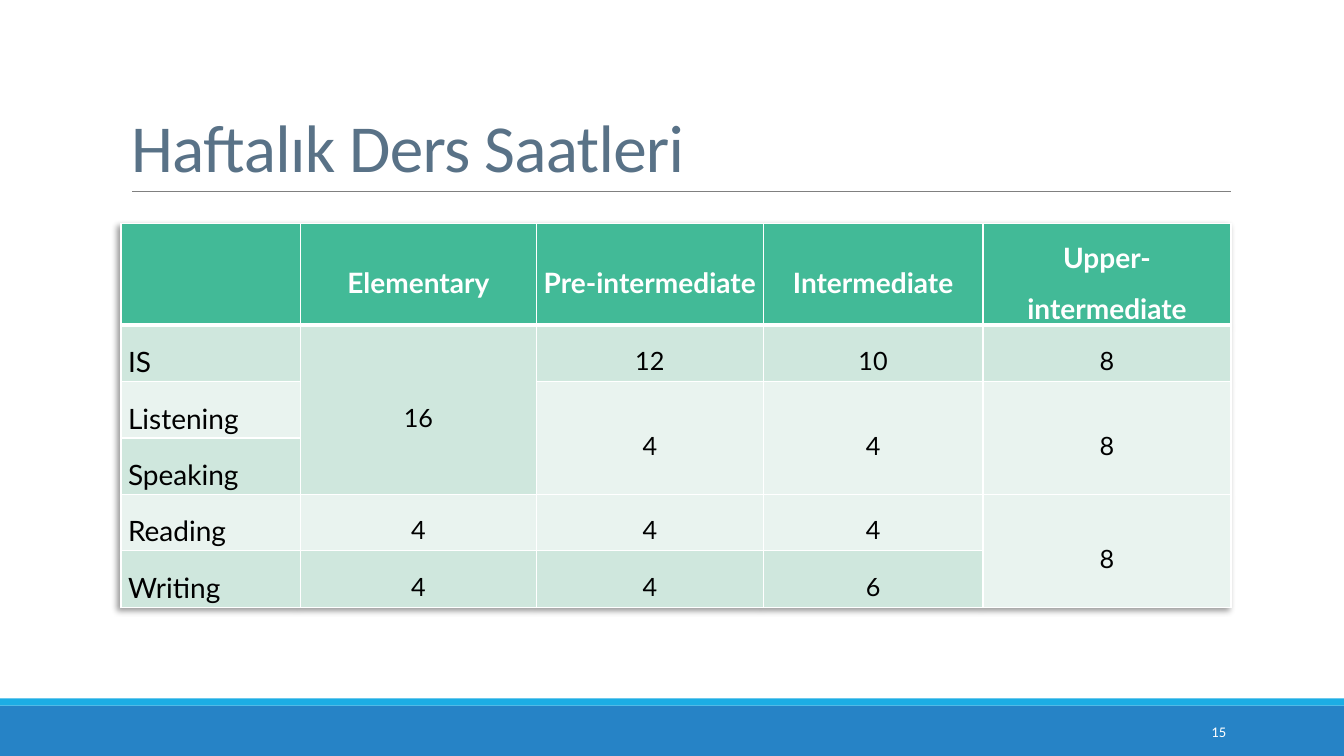
import pptx
import pptx.util
import pptx.dml.color
import pptx.enum.shapes
import pptx.enum.text
import pptx.oxml
import pptx.oxml.ns

Inches, Pt = pptx.util.Inches, pptx.util.Pt
RGB = pptx.dml.color.RGBColor
ALIGN, ANCHOR = pptx.enum.text.PP_ALIGN, pptx.enum.text.MSO_ANCHOR
NS = pptx.oxml.ns.nsdecls("a")

# Content: None marks a cell covered by the merged cell above it
TITLE = "Haftalık Ders Saatleri"
PAGE = "15"
HOURS = [
    ["", "Elementary", "Pre-intermediate", "Intermediate", "Upper-intermediate"],
    ["IS", "16", "12", "10", "8"],
    ["Listening", None, "4", "4", "8"],
    ["Speaking", None, None, None, None],
    ["Reading", "4", "4", "4", "8"],
    ["Writing", "4", "4", "6", None],
]
COLS = [1.78, 2.34, 2.25, 2.18, 2.46]
ROWS = [1.0] + [0.56] * 5

WHITE = RGB(0xFF, 0xFF, 0xFF)
BLACK = RGB(0, 0, 0)
SLATE = RGB(0x59, 0x72, 0x87)
GREY = RGB(0x80, 0x80, 0x80)
BLUE = RGB(0x26, 0x83, 0xC6)
SKY = RGB(0x1C, 0xAD, 0xE4)
GREEN = RGB(0x42, 0xBA, 0x97)
BANDS = [RGB(0xE9, 0xF3, 0xEF), RGB(0xCF, 0xE7, 0xDD)]
BARS = [(7, 0.5, BLUE), (6.93, 0.07, SKY)]


def edge(cell, row):
    """Draw white cell borders, thicker under the header."""
    thick = {"lnB": 0, "lnT": 1}
    props = cell._tc.get_or_add_tcPr()
    for i, tag in enumerate(["lnL", "lnR", "lnT", "lnB"]):
        width = Pt(3 if thick.get(tag) == row else 1)
        props.insert(i, pptx.oxml.parse_xml(
            f'<a:{tag} {NS} w="{width}"><a:solidFill><a:srgbClr val="{WHITE}"/>'
            f'</a:solidFill></a:{tag}>'))


def style(cell, row, col):
    head = row == 0
    cell.fill.solid()
    cell.fill.fore_color.rgb = GREEN if head else BANDS[row % 2]
    edge(cell, row)
    cell.vertical_anchor = ANCHOR.MIDDLE
    cell.margin_left = cell.margin_right = Inches(0.07)
    cell.margin_top = cell.margin_bottom = 0
    cell.text = HOURS[row][col] or ""
    para = cell.text_frame.paragraphs[0]
    para.alignment = ALIGN.CENTER if head or col else ALIGN.LEFT
    para.line_spacing = 1.5
    font = para.font
    font.name, font.bold = "Lato", head
    font.size = Pt(20 if head or col == 0 else 18)
    font.color.rgb = WHITE if head else BLACK


def main():
    deck = pptx.Presentation()
    deck.slide_width, deck.slide_height = Inches(13.33), Inches(7.5)
    slide = deck.slides.add_slide(deck.slide_layouts[5])
    shapes = slide.shapes

    # Footer bars
    for top, height, color in BARS:
        bar = shapes.add_shape(pptx.enum.shapes.MSO_SHAPE.RECTANGLE,
                               0, Inches(top), deck.slide_width, Inches(height))
        bar.shadow.inherit = False
        bar.fill.solid()
        bar.fill.fore_color.rgb = color
        bar.line.fill.background()

    # Title and rule
    title = shapes.title
    title.left, title.top = Inches(1.2), Inches(0.31)
    title.width, title.height = Inches(11), Inches(1.59)
    frame = title.text_frame
    frame.text = TITLE
    frame.vertical_anchor = ANCHOR.BOTTOM
    para = frame.paragraphs[0]
    para.alignment, para.line_spacing = ALIGN.LEFT, 0.85
    para.font.name, para.font.size = "Calibri", Pt(48)
    para.font.color.rgb = SLATE
    para.runs[0]._r.get_or_add_rPr().set("spc", "-50")

    rule = shapes.add_connector(pptx.enum.shapes.MSO_CONNECTOR.STRAIGHT,
                                Inches(1.31), Inches(1.9), Inches(12.21), Inches(1.9))
    rule.line.color.rgb, rule.line.width = GREY, Pt(0.5)
    rule._element.spPr.append(pptx.oxml.parse_xml(f"<a:effectLst {NS}/>"))

    # Hours table with a soft shadow
    table = shapes.add_table(len(ROWS), len(COLS), Inches(1.2), Inches(2.22),
                             Inches(sum(COLS)), Inches(sum(ROWS))).table
    table._tbl.tblPr.insert(0, pptx.oxml.parse_xml(
        f'<a:effectLst {NS}><a:outerShdw blurRad="50800" dist="38100" dir="8100000">'
        '<a:srgbClr val="000000"><a:alpha val="40000"/></a:srgbClr>'
        '</a:outerShdw></a:effectLst>'))
    for col, width in enumerate(COLS):
        table.columns[col].width = Inches(width)
    for row, height in enumerate(ROWS):
        table.rows[row].height = Inches(height)
        for col in range(len(COLS)):
            style(table.cell(row, col), row, col)
    for col in range(len(COLS)):
        for row in range(len(ROWS)):
            end = row
            while end + 1 < len(ROWS) and HOURS[end + 1][col] is None:
                end += 1
            if HOURS[row][col] is not None and end > row:
                table.cell(row, col).merge(table.cell(end, col))

    # Page number
    box = shapes.add_textbox(Inches(10.83), Inches(7.06), Inches(1.43), Inches(0.4))
    frame = box.text_frame
    frame.word_wrap = True
    frame.vertical_anchor = ANCHOR.MIDDLE
    frame.text = PAGE
    para = frame.paragraphs[0]
    para.alignment = ALIGN.RIGHT
    para.font.name, para.font.size = "Calibri", Pt(10.5)
    para.font.color.rgb = WHITE

    deck.save("out.pptx")


if __name__ == "__main__":
    main()
